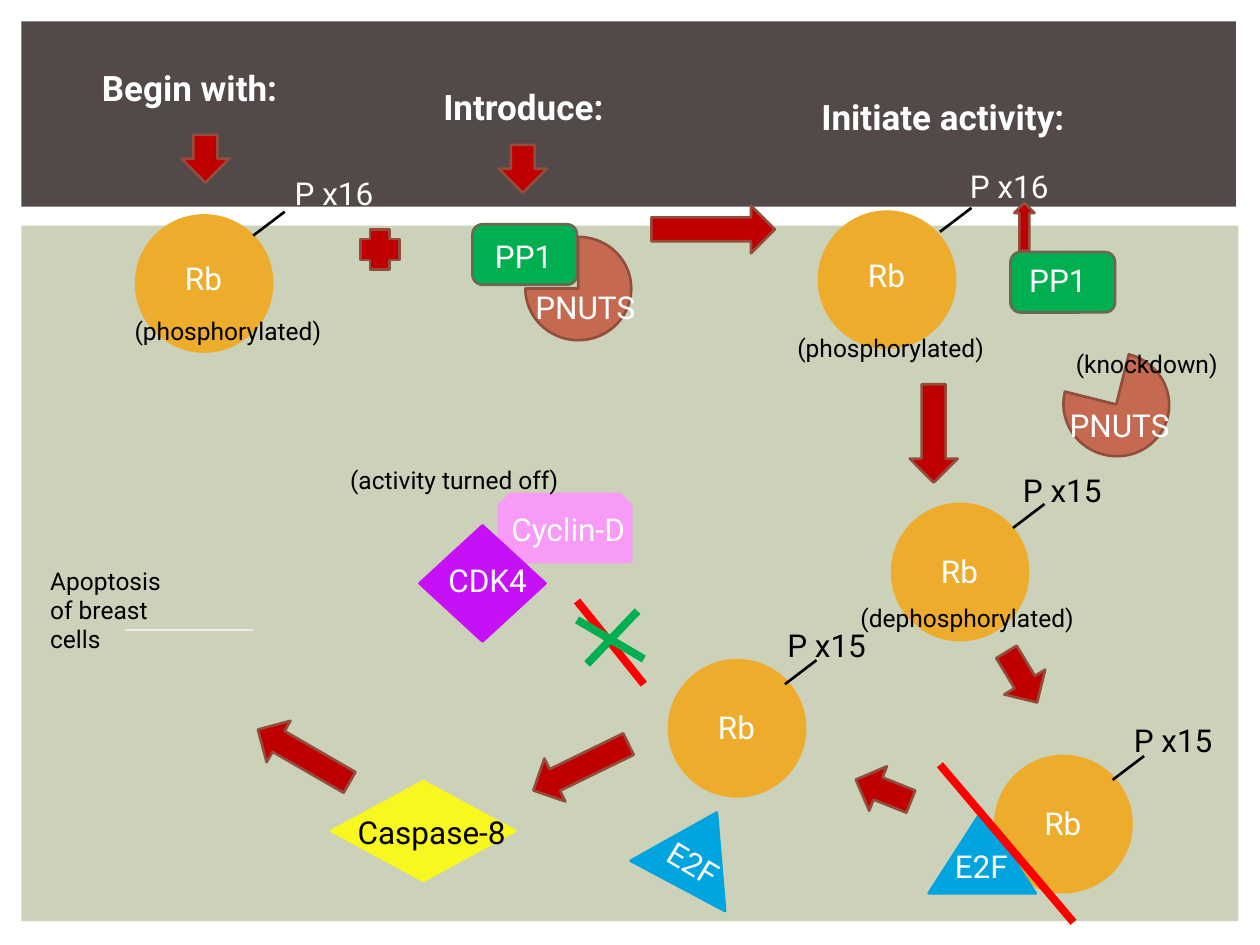
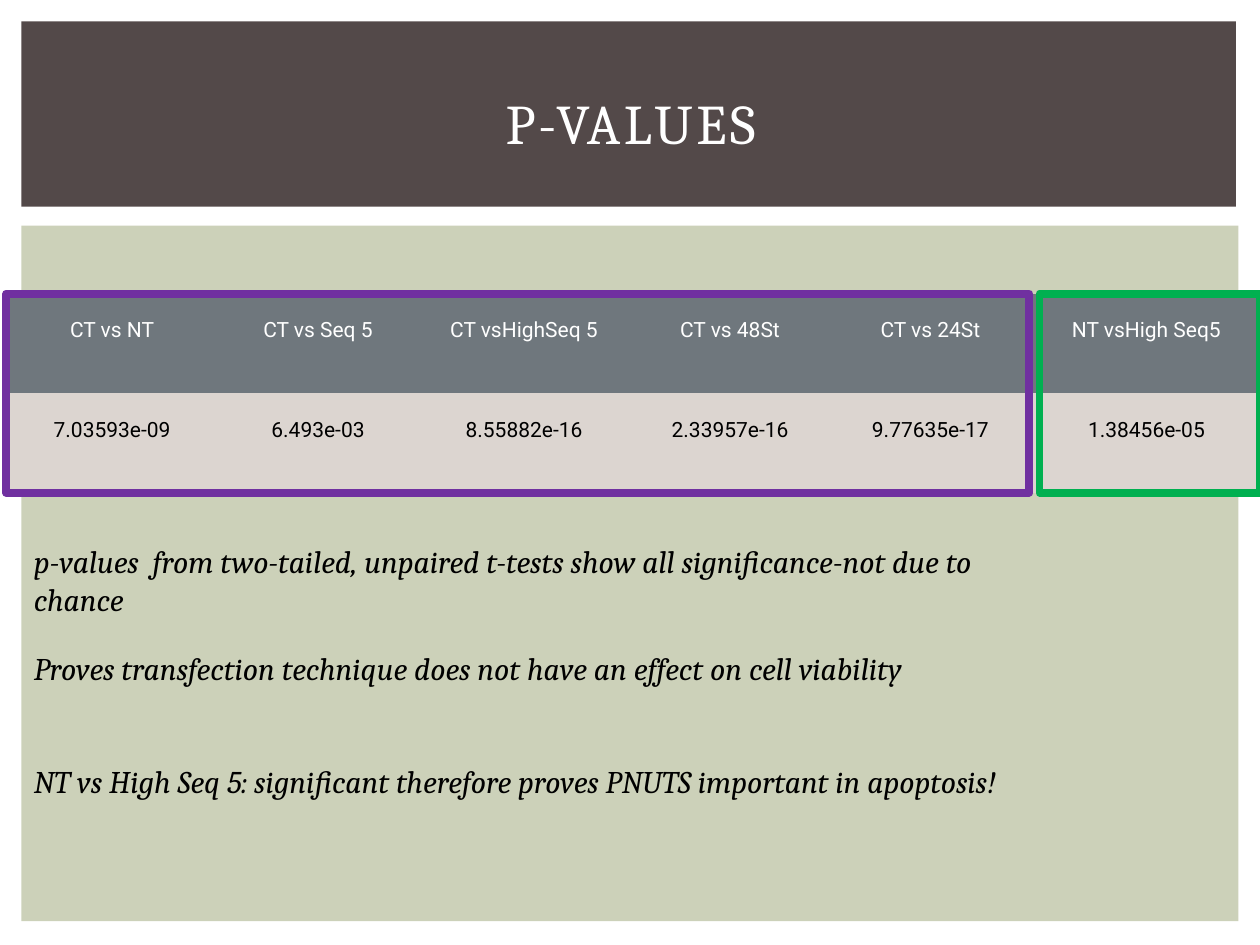
from dataclasses import dataclass

from lxml import etree
from pptx import Presentation
from pptx.dml import color
from pptx.enum import shapes, text
from pptx.oxml import ns
from pptx.util import Inches, Pt


@dataclass(frozen=True)
class Theme:
    sans: str = "Roboto"
    serif: str = "Cambria"
    white: str = "FFFFFF"
    black: str = "000000"
    band: str = "534949"
    panel: str = "CCD1B9"
    rb: str = "EDAC2B"
    green: str = "00B050"
    pp1_edge: str = "6C6753"
    arrow: str = "C00000"
    arrow_edge: str = "924E3C"
    pnuts: str = "C66951"
    e2f: str = "00A4DE"
    cyclin: str = "F79BF7"
    cdk4: str = "C610F8"
    caspase: str = "F8F820"
    cell: str = "F7E9E5"
    red: str = "FF0000"
    purple: str = "7030A0"
    table_head: str = "6F777D"
    table_body: str = "DCD5D0"
    title_size: int = 32
    heading_size: int = 20
    label_size: int = 18
    note_size: int = 14
    table_size: int = 12
    thin: float = 1.5
    thick: float = 4.5


theme = Theme()
kind = shapes.MSO_SHAPE


def draw(page, preset, box, fill, line, turn=0, width=theme.thin):
    """Add a preset shape; a fill or line of None is left empty."""
    shape = page.shapes.add_shape(preset, *map(Inches, box))
    shape.shadow.inherit = False
    shape.rotation = turn
    for paint, value in ((shape.fill, fill), (shape.line.fill, line)):
        if value is None:
            paint.background()
        else:
            paint.solid()
            paint.fore_color.rgb = color.RGBColor.from_string(value)
    if line:
        shape.line.width = Pt(width)
    return shape


def write(frame, content, ink, size, name=theme.sans, **formats):
    """Put one formatted span into the first paragraph of a text frame."""
    frame.word_wrap = True
    para = frame.paragraphs[0]
    span = para.add_run()
    span.text = content
    formats = {"name": name, "size": Pt(size), "bold": False, **formats}
    for key, value in formats.items():
        setattr(span.font, key, value)
    span.font.color.rgb = color.RGBColor.from_string(ink)
    return para, span


deck = Presentation()
deck.slide_width, deck.slide_height = Inches(10), Inches(7.5)
pathway = deck.slides.add_slide(deck.slide_layouts[6])
results = deck.slides.add_slide(deck.slide_layouts[5])

# Shared background: title band and panel, behind everything else
for page in (pathway, results):
    for box, fill in (((0.17, 0.17, 9.64, 1.47), theme.band),
                      ((0.17, 1.79, 9.66, 5.52), theme.panel)):
        backdrop = draw(page, kind.RECTANGLE, box, fill, None)
        page.shapes._spTree.insert(2, backdrop._element)

# Pathway: Rb circles, each with a tether to its phosphate count
labels = []
lines = []
rb_states = [  # left, top, tether left, tether drop, count left, count top, count, ink
    (1.08, 1.71, 2.01, 0.16, 2.24, 1.33, "P x16", theme.white),
    (6.5, 1.68, 7.46, 0.16, 7.6, 1.28, "P x16", theme.white),
    (7.08, 4, 8.04, 0.19, 8.02, 3.69, "P x15", theme.black),
    (7.9, 6, 8.83, 0.19, 8.9, 5.67, "P x15", theme.black),
    (5.31, 5.24, 6.23, 0.19, 6.15, 4.92, "P x15", theme.black),
]
for left, top, tether, drop, count_left, count_top, count, ink in rb_states:
    draw(pathway, kind.OVAL, (left, top, 1.08, 1.08), theme.rb, theme.rb)
    lines.append((tether, top + drop, tether + 0.25, top + drop - 0.19,
                  theme.black, theme.thin))
    labels += [((count_left, count_top, 0.93, 0.4), count, ink, 0),
               ((left + 0.29, top + drop + 0.14, 0.5, 0.42), "Rb", theme.white, 0)]

# Pathway: proteins
for preset, box, fill, line, turn in [
    (kind.ROUNDED_RECTANGLE, (3.75, 1.78, 0.83, 0.48), theme.green, theme.pp1_edge, 0),
    (kind.ROUNDED_RECTANGLE, (8.02, 2, 0.83, 0.48), theme.green, theme.pp1_edge, 0),
    (kind.PIE, (4.18, 1.87, 0.82, 0.84), theme.pnuts, theme.arrow_edge, 270),
    (kind.PIE, (8.45, 2.79, 0.82, 0.84), theme.pnuts, theme.arrow_edge, 284),
    (kind.ISOSCELES_TRIANGLE, (7.37, 6.43, 0.85, 0.66), theme.e2f, theme.e2f, 0),
    (kind.ISOSCELES_TRIANGLE, (5.11, 6.41, 0.85, 0.66), theme.e2f, theme.e2f, 28),
    (kind.SNIP_2_SAME_RECTANGLE, (3.96, 3.92, 1.05, 0.54), theme.cyclin, theme.cyclin, 0),
    (kind.DIAMOND, (3.33, 4.17, 1, 0.92), theme.cdk4, theme.cdk4, 0),
    (kind.FLOWCHART_DECISION, (2.63, 6.2, 1.46, 0.79), theme.caspase, theme.caspase, 0),
]:
    draw(pathway, preset, box, fill, line, turn)

# Pathway: plus sign and block arrows
draw(pathway, kind.CROSS, (2.86, 1.82, 0.31, 0.32), theme.arrow, theme.arrow_edge)
for left, top, width, height, turn in [
    (1.44, 1.07, 0.38, 0.38, 0),
    (3.96, 1.15, 0.38, 0.38, 0),
    (8.05, 1.61, 0.16, 0.38, 180),
    (5.47, 1.33, 0.38, 0.98, 270),
    (7.22, 3.05, 0.38, 0.78, 0),
    (7.92, 5.14, 0.38, 0.47, 328.7),
    (6.82, 6.04, 0.38, 0.47, 111.8),
    (4.42, 5.67, 0.38, 0.84, 64),
    (2.22, 5.58, 0.38, 0.84, 120),
]:
    draw(pathway, kind.DOWN_ARROW, (left, top, width, height),
         theme.arrow, theme.arrow_edge, turn)

# Pathway: apoptotic cell fragments
for outline in [
    [(1.26, 5.55), (1.34, 5.55), (1.36, 5.59), (1.37, 5.63), (1.37, 5.71),
     (1.33, 5.75), (1.25, 5.74), (1.22, 5.71), (1.2, 5.65), (1.21, 5.59)],
    [(1.54, 5), (1.6, 5.09), (1.59, 5.13), (1.55, 5.17), (1.5, 5.18),
     (1.46, 5.15), (1.42, 5.08), (1.41, 5.03), (1.45, 4.98), (1.5, 4.97)],
    [(0.88, 5.18), (0.95, 5.13), (0.98, 5.13), (1.04, 5.17), (1.06, 5.22),
     (1.04, 5.26), (0.98, 5.3), (0.93, 5.31), (0.88, 5.28), (0.86, 5.23)],
    [(0.75, 5.67), (0.94, 5.67), (0.98, 5.68), (1, 5.7), (0.95, 5.72),
     (0.78, 5.72), (0.72, 5.71), (0.71, 5.7)],
    [(1.78, 5.34), (1.95, 5.41), (1.98, 5.43), (1.99, 5.46), (1.94, 5.46),
     (1.85, 5.43), (1.76, 5.39), (1.7, 5.36), (1.71, 5.33)],
]:
    builder = pathway.shapes.build_freeform(*outline[0], scale=Inches(1))
    builder.add_line_segments(outline[1:], close=True)
    fragment = builder.convert_to_shape()
    fragment.shadow.inherit = False
    for paint in (fragment.fill, fragment.line.fill):
        paint.solid()
        paint.fore_color.rgb = color.RGBColor.from_string(theme.cell)
    fragment.line.width = Pt(theme.thin)

# Pathway: protein names, stage headings and notes
labels += [
    ((3.83, 1.83, 0.79, 0.4), "PP1", theme.white, 0),
    ((8.07, 2.02, 0.79, 0.4), "PP1", theme.white, 0),
    ((4.15, 2.24, 1.17, 0.4), "PNUTS", theme.white, 0),
    ((8.39, 3.17, 1.17, 0.4), "PNUTS", theme.white, 0),
    ((7.48, 6.67, 0.68, 0.4), "E2F", theme.white, 0),
    ((5.19, 6.67, 0.68, 0.4), "E2F", theme.white, 31),
    ((3.96, 4, 1.1, 0.4), "Cyclin-D", theme.white, 0),
    ((3.46, 4.4, 0.88, 0.4), "CDK4", theme.white, 0),
    ((2.74, 6.4, 1.41, 0.4), "Caspase-8", theme.black, 0),
]
headings = [
    ((0.71, 0.48, 1.83, 0.44), "Begin with:", theme.white, 0),
    ((3.42, 0.63, 1.83, 0.44), "Introduce:", theme.white, 0),
    ((6.42, 0.71, 2.75, 0.44), "Initiate activity:", theme.white, 0),
]
notes = [
    ((0.97, 2.46, 1.73, 0.34), "(phosphorylated)", theme.black, 0),
    ((6.23, 2.59, 1.73, 0.34), "(phosphorylated)", theme.black, 0),
    ((8.44, 2.72, 1.73, 0.34), "(knockdown)", theme.black, 0),
    ((6.73, 4.74, 1.95, 0.34), "(dephosphorylated)", theme.black, 0),
    ((0.3, 4.44, 1.1, 0.81), "Apoptosis of breast cells", theme.black, 0),
    ((2.68, 3.64, 2.01, 0.34), "(activity turned off)", theme.black, 0),
]
for group, size, bold in ((labels, theme.label_size, False),
                          (headings, theme.heading_size, True),
                          (notes, theme.note_size, False)):
    for box, content, ink, turn in group:
        label = pathway.shapes.add_textbox(*map(Inches, box))
        label.rotation = turn
        write(label.text_frame, content, ink, size, bold=bold)

# Pathway: tethers and strike-through lines
lines += [
    (7.46, 6.07, 8.52, 7.32, theme.red, theme.thick),
    (4.58, 4.77, 5.11, 5.43, theme.red, theme.thick),
    (5.06, 4.85, 4.66, 5.27, theme.green, theme.thick),
    (4.58, 4.92, 5.11, 5.23, theme.green, theme.thick),
]
for *ends, ink, width in lines:
    stroke = pathway.shapes.add_connector(shapes.MSO_CONNECTOR.STRAIGHT,
                                          *map(Inches, ends))
    stroke.line.color.rgb = color.RGBColor.from_string(ink)
    stroke.line.width = Pt(width)
    etree.SubElement(stroke._element.spPr, ns.qn("a:effectLst"))

# Results: title
title = results.shapes.title
title.left, title.top, title.width, title.height = map(Inches, (0.42, 0.39, 9.17, 1.15))
title.text_frame.vertical_anchor = text.MSO_ANCHOR.MIDDLE
para, span = write(title.text_frame, "P-VALUES", theme.white, theme.title_size, theme.serif)
para.alignment = text.PP_ALIGN.CENTER
span.font._element.set("spc", "200")

# Results: table of p-values
p_values = {
    "CT vs NT": "7.03593e-09",
    "CT vs Seq 5": "6.493e-03",
    "CT vsHighSeq 5": "8.55882e-16",
    "CT vs 48St": "2.33957e-16",
    "CT vs 24St": "9.77635e-17",
    "NT vsHigh Seq5": "1.38456e-05",
}
grid = results.shapes.add_table(2, len(p_values), *map(Inches, (0.03, 2.33, 9.97, 1.58))).table
grid.first_row = grid.horz_banding = False
style = grid._tbl.tblPr.find(ns.qn("a:tableStyleId"))
style.text = "{2D5ABB26-0587-4C30-8999-92F81FD0307C}"  # no style, no grid
for column, width in zip(grid.columns, (1.72, 1.55, 1.72, 1.55, 1.63, 1.8)):
    column.width = Inches(width)
rows = ((p_values.keys(), theme.table_head, theme.white),
        (p_values.values(), theme.table_body, theme.black))
for row, (contents, fill, ink) in enumerate(rows):
    grid.rows[row].height = Inches(0.79)
    for column, content in enumerate(contents):
        cell = grid.cell(row, column)
        cell.fill.solid()
        cell.fill.fore_color.rgb = color.RGBColor.from_string(fill)
        cell.margin_left = cell.margin_right = Inches(0.07)
        cell.margin_top = cell.margin_bottom = 0
        para, span = write(cell.text_frame, content, ink, theme.table_size)
        para.alignment = text.PP_ALIGN.CENTER
        para.line_spacing = 2.0

# Results: frames around the two groups of comparisons
for left, width, ink in ((8.25, 1.75, theme.green), (0.05, 8.12, theme.purple)):
    draw(results, kind.RECTANGLE, (left, 2.33, width, 1.58), None, ink, width=theme.thick)

# Results: conclusions
for top, height, content in [
    (4.25, 0.71, "p-values  from two-tailed, unpaired t-tests show all significance-not due to chance"),
    (5.1, 0.4, "Proves transfection technique does not have an effect on cell viability"),
    (6, 0.4, "NT vs High Seq 5: significant therefore proves PNUTS important in apoptosis!"),
]:
    conclusion = results.shapes.add_textbox(*map(Inches, (0.17, top, 8.25, height)))
    write(conclusion.text_frame, content, theme.black, theme.label_size,
          theme.serif, italic=True)

deck.save("out.pptx")
